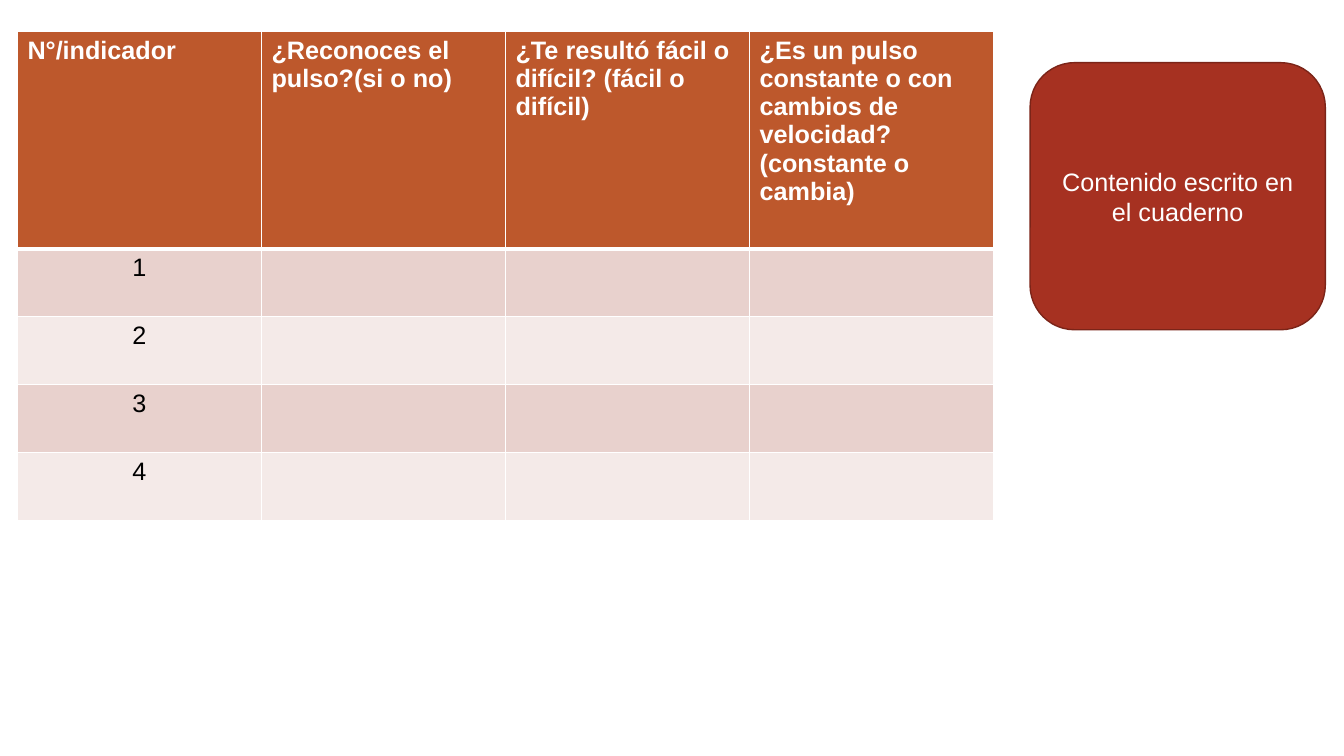
import pptx
import pptx.util
import pptx.dml.color
import pptx.enum.shapes
import pptx.enum.text
import pptx.oxml
import pptx.oxml.ns
from dataclasses import dataclass

Cm = pptx.util.Cm
Align = pptx.enum.text.PP_ALIGN


@dataclass(frozen=True)
class Theme:
    face: str = "Arial"
    size: int = 18
    head: str = "BD582C"
    bands: tuple = ("E8D1CD", "F4EAE8")
    note: str = "A63121"
    edge: str = "7B2418"
    white: str = "FFFFFF"
    black: str = "000000"
    thin: int = 1
    thick: int = 3


def tint(code):
    return pptx.dml.color.RGBColor.from_string(code)


class Deck:
    """Holds the theme and the current slide."""

    def __init__(self, theme):
        self.theme = theme
        self.show = pptx.Presentation()
        self.show.slide_width = Cm(33.87)
        self.show.slide_height = Cm(19.05)
        self.slide = self.show.slides.add_slide(self.show.slide_layouts[6])

    def label(self, frame, text, color, align, bold=False):
        line = frame.paragraphs[0]
        line.text = text
        line.alignment = align
        font = line.font
        font.name = self.theme.face
        font.size = pptx.util.Pt(self.theme.size)
        font.bold = bold
        font.color.rgb = tint(color)

    def border(self, cell, top, bottom):
        """Draw white cell edges; top and bottom are widths in points."""
        thin = self.theme.thin
        edges = {"lnL": thin, "lnR": thin, "lnT": top, "lnB": bottom}
        props = cell._tc.get_or_add_tcPr()
        for place, (tag, width) in enumerate(edges.items()):
            props.insert(place, pptx.oxml.parse_xml(
                f'<a:{tag} {pptx.oxml.ns.nsdecls("a")} w="{pptx.util.Pt(width)}">'
                f'<a:solidFill><a:srgbClr val="{self.theme.white}"/></a:solidFill>'
                f'</a:{tag}>'))

    def table(self, left, top, wide, tall, heads, marks):
        """Add a table; tall holds the header and body row heights."""
        theme = self.theme
        rows = [heads] + [[mark] + [""] * (len(heads) - 1) for mark in marks]
        grid = self.slide.shapes.add_table(
            len(rows), len(heads), Cm(left), Cm(top),
            Cm(wide * len(heads)), Cm(tall[0] + tall[1] * len(marks))).table
        for column in grid.columns:
            column.width = Cm(wide)
        for r, texts in enumerate(rows):
            first = r == 0
            grid.rows[r].height = Cm(tall[0] if first else tall[1])
            fill = theme.head if first else theme.bands[(r - 1) % 2]
            color = theme.white if first else theme.black
            align = Align.LEFT if first else Align.CENTER
            for c, text in enumerate(texts):
                cell = grid.cell(r, c)
                cell.fill.solid()
                cell.fill.fore_color.rgb = tint(fill)
                self.label(cell.text_frame, text, color, align, first)
                self.border(cell, theme.thick if r == 1 else theme.thin,
                            theme.thick if first else theme.thin)

    def note(self, left, top, width, height, text):
        theme = self.theme
        box = self.slide.shapes.add_shape(
            pptx.enum.shapes.MSO_SHAPE.ROUNDED_RECTANGLE,
            Cm(left), Cm(top), Cm(width), Cm(height))
        box.shadow.inherit = False
        box.fill.solid()
        box.fill.fore_color.rgb = tint(theme.note)
        box.line.color.rgb = tint(theme.edge)
        box.line.width = pptx.util.Pt(theme.thin)
        frame = box.text_frame
        frame.word_wrap = True
        frame.vertical_anchor = pptx.enum.text.MSO_ANCHOR.MIDDLE
        self.label(frame, text, theme.white, Align.CENTER)


def main():
    deck = Deck(Theme())
    deck.note(25.96, 1.58, 7.44, 6.73, "Contenido escrito en el cuaderno")
    heads = [
        "N°/indicador",
        "¿Reconoces el pulso?(si o no)",
        "¿Te resultó fácil o difícil? (fácil o difícil)",
        "¿Es un pulso constante o con cambios de velocidad? (constante o cambia)",
    ]
    deck.table(0.44, 0.79, 6.15, (5.48, 1.71), heads, ["1", "2", "3", "4"])
    deck.show.save("out.pptx")


if __name__ == "__main__":
    main()
